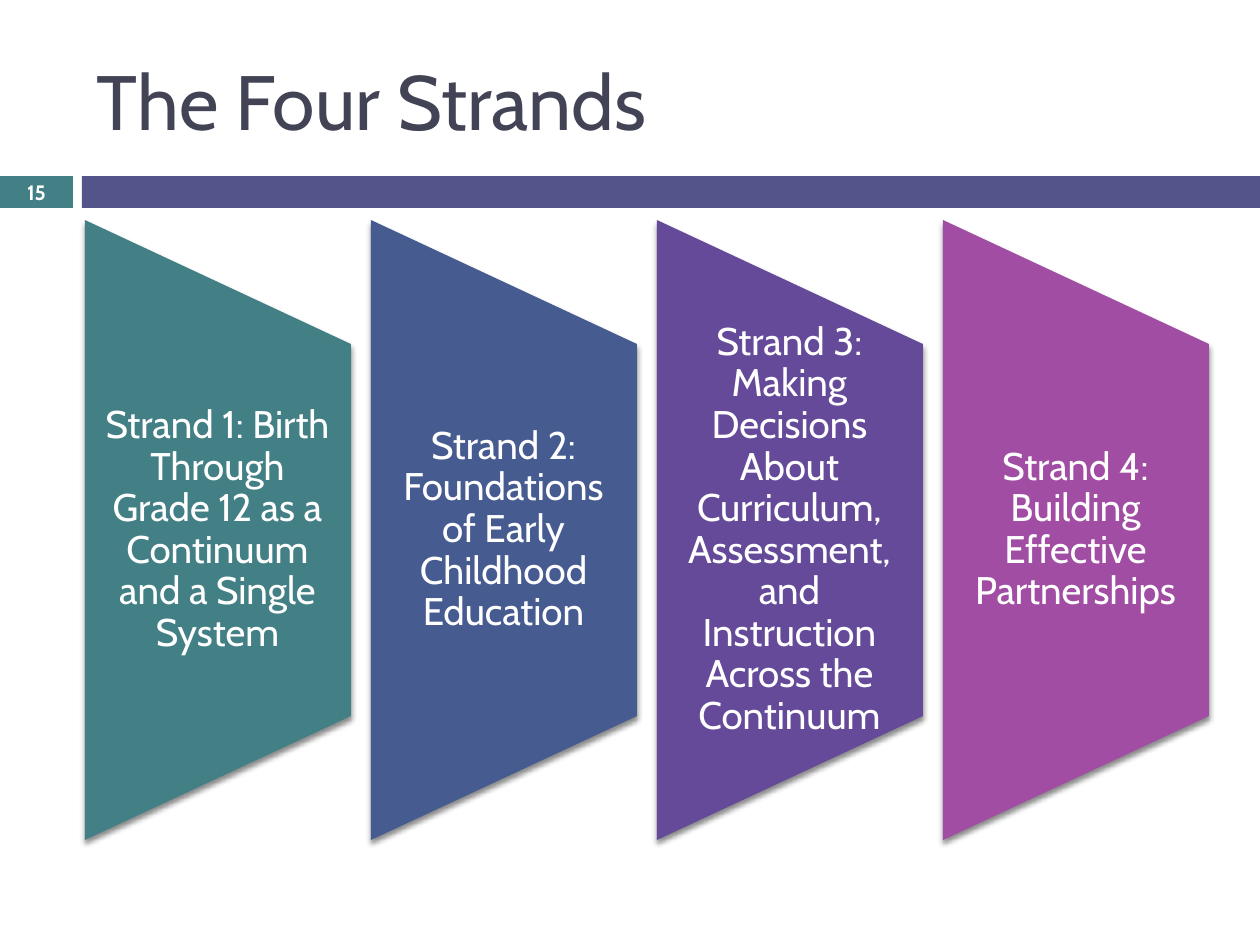
import pptx
import pptx.util
import pptx.dml.color
import pptx.enum.shapes
import pptx.enum.text
import pptx.oxml
import pptx.oxml.ns

PX = 914400 / 126
SHAPE = pptx.enum.shapes.MSO_SHAPE
ALIGN = pptx.enum.text.PP_ALIGN
SHADOW = (
    f'<a:effectLst {pptx.oxml.ns.nsdecls("a")}>'
    '<a:outerShdw blurRad="38100" dist="30480" dir="5400000" rotWithShape="0">'
    '<a:srgbClr val="000000"><a:alpha val="45000"/></a:srgbClr>'
    '</a:outerShdw></a:effectLst>'
)
STRANDS = [
    ("Strand 1: Birth Through Grade 12 as a Continuum and a Single System", "438086"),
    ("Strand 2: Foundations of Early Childhood Education", "465B90"),
    ("Strand 3: Making Decisions About Curriculum, Assessment, and Instruction "
     "Across the Continuum", "654A99"),
    ("Strand 4: Building Effective Partnerships", "A04DA3"),
]


def px(n):
    return pptx.util.Emu(round(n * PX))


def color(value):
    return pptx.dml.color.RGBColor.from_string(value)


class Deck:
    font = "Cabin"
    white = "FFFFFF"

    def __init__(self, width, height):
        self.prs = pptx.Presentation()
        self.prs.slide_width = px(width)
        self.prs.slide_height = px(height)
        self.s = self.prs.slides.add_slide(self.prs.slide_layouts[6])

    def shape(self, kind, x, y, w, h, fill):
        sp = self.s.shapes.add_shape(kind, px(x), px(y), px(w), px(h))
        sp.shadow.inherit = False
        sp.fill.solid()
        sp.fill.fore_color.rgb = color(fill)
        sp.line.fill.background()
        return sp

    def text(self, text, x, y, w, h, size, ink=white, align=ALIGN.CENTER,
             bold=False, spacing=None, insets=(13, 6, 13, 6)):
        sp = self.s.shapes.add_textbox(px(x), px(y), px(w), px(h))
        tf = sp.text_frame
        tf.word_wrap = True
        tf.vertical_anchor = pptx.enum.text.MSO_ANCHOR.MIDDLE
        tf.margin_left, tf.margin_top, tf.margin_right, tf.margin_bottom = map(px, insets)
        tf.text = text
        p = tf.paragraphs[0]
        p.alignment = align
        p.line_spacing = spacing
        r = p.runs[0]
        r.font.name = self.font
        r.font.size = pptx.util.Pt(size)
        r.font.bold = bold
        r.font.color.rgb = color(ink)

    def strand(self, text, x, y, w, h, fill):
        sp = self.shape(SHAPE.FLOWCHART_MANUAL_OPERATION,
                        x + (w - h) / 2, y + (h - w) / 2, h, w, fill)
        sp.rotation = 270
        props = sp.fill._xPr
        props.replace(props.find(pptx.oxml.ns.qn("a:effectLst")),
                      pptx.oxml.parse_xml(SHADOW))
        self.text(text, x, y + h / 5, w, h * 3 / 5, 22,
                  spacing=0.9, insets=(19, 0, 20, 0))


def main():
    deck = Deck(1260, 945)
    deck.shape(SHAPE.RECTANGLE, 0, 176, 73, 32, "438086")
    deck.shape(SHAPE.RECTANGLE, 82, 176, 1178, 32, "53548A")
    deck.text("The Four Strands", 84, 32, 1124, 136, 44, "424456", ALIGN.LEFT)
    for i, (text, fill) in enumerate(STRANDS):
        deck.strand(text, 85 + 286 * i, 220, 266, 620, fill)
    deck.text("15", 0, 175, 73, 34, 11.9, bold=True)
    deck.prs.save("out.pptx")


if __name__ == "__main__":
    main()
